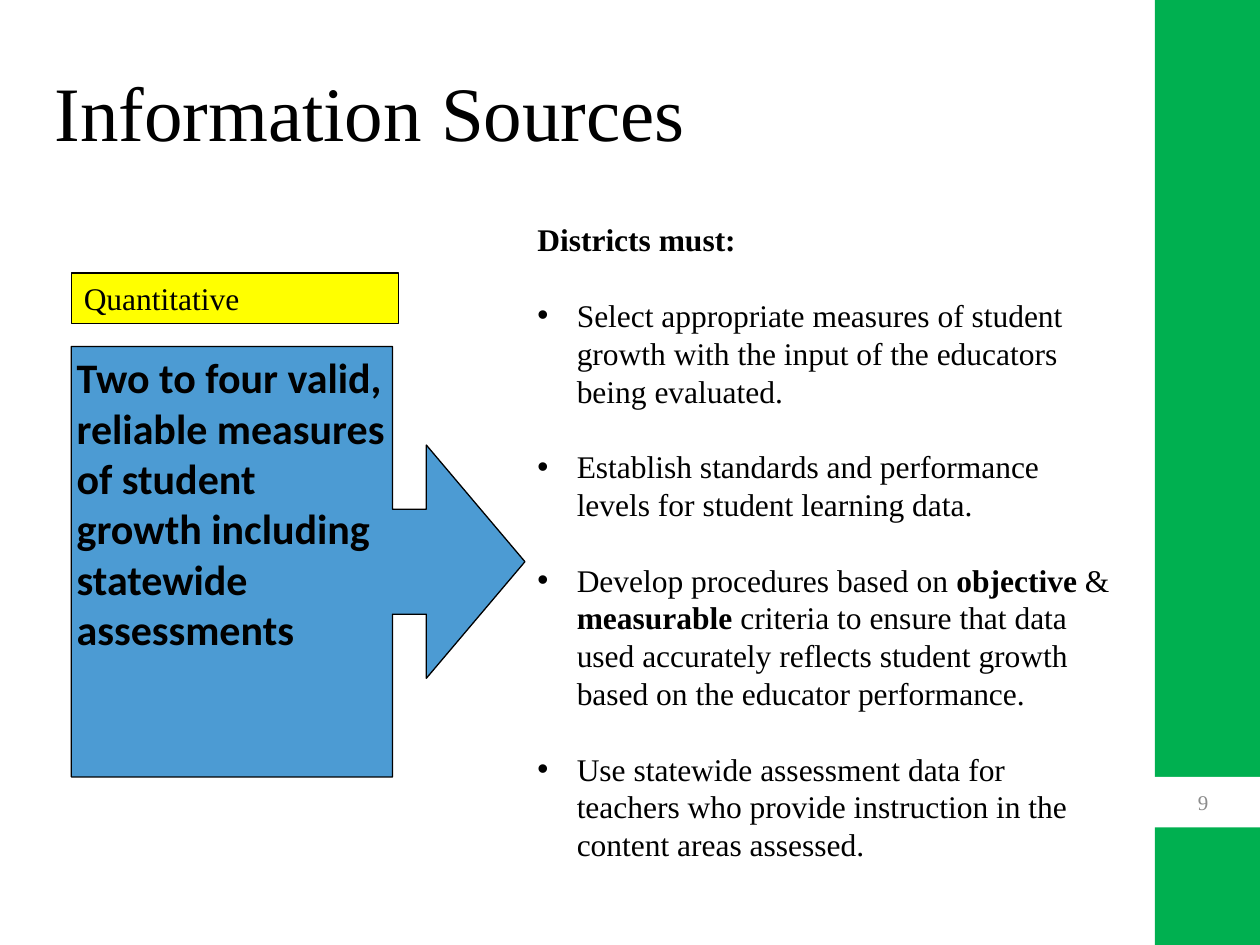
from lxml.etree import SubElement
from pptx import Presentation
from pptx.dml.color import RGBColor
from pptx.enum.shapes import MSO_SHAPE as Shape
from pptx.enum.text import MSO_ANCHOR as Anchor, PP_ALIGN as Align
from pptx.oxml.ns import qn
from pptx.util import Pt

SERIF = "Times New Roman"
LINE_FACTOR = 1.2
DUTY_SIZE = 18
INDENT = 22.5

# Every second piece of a duty is bold.
DUTIES = [
    ["Select appropriate measures of student growth with the input of the "
     "educators being evaluated."],
    ["Establish standards and performance levels for student learning data."],
    ["Develop procedures based on ", "objective", " & ", "measurable",
     " criteria to ensure that data used accurately reflects student growth "
     "based on the educator performance."],
    ["Use statewide assessment data for teachers who provide instruction in "
     "the content areas assessed."],
]


def rgb(color):
    return RGBColor.from_string(color)


def style_font(font, size, name=SERIF, color="000000", bold=False):
    font.size, font.name, font.bold = Pt(size), name, bold
    font.color.rgb = rgb(color)


def add_block(slide, kind, box, fill, line=None):
    block = slide.shapes.add_shape(kind, *map(Pt, box))
    block.shadow.inherit = False
    block.fill.solid()
    block.fill.fore_color.rgb = rgb(fill)
    if line:
        block.line.color.rgb = rgb(line)
        block.line.width = Pt(0.75)
    else:
        block.line.fill.background()
    return block


def write(block, text, size, anchor=Anchor.TOP, align=Align.LEFT, **font):
    frame = block.text_frame
    frame.word_wrap = True
    frame.vertical_anchor = anchor
    frame.text = text
    paragraph = frame.paragraphs[0]
    paragraph.alignment = align
    style_font(paragraph.runs[0].font, size, **font)
    return paragraph


def add_bullet(paragraph):
    """Give the paragraph a round bullet with a hanging indent."""
    props = paragraph._p.get_or_add_pPr()
    props.set("marL", str(Pt(INDENT)))
    props.set("indent", str(-Pt(INDENT)))
    SubElement(props, qn("a:buFont"), typeface="Arial")
    SubElement(props, qn("a:buChar"), char="•")


def add_duties(slide, box):
    duties = slide.shapes.add_textbox(*map(Pt, box))
    line_height = Pt(DUTY_SIZE * LINE_FACTOR)
    heading = write(duties, "Districts must:", DUTY_SIZE, bold=True)
    heading.line_spacing = line_height
    for pieces in DUTIES:
        paragraph = duties.text_frame.add_paragraph()
        add_bullet(paragraph)
        paragraph.line_spacing = paragraph.space_before = line_height
        for index, piece in enumerate(pieces):
            run = paragraph.add_run()
            run.text = piece
            style_font(run.font, DUTY_SIZE, bold=index % 2 == 1)


def add_measures(slide, box):
    callout = add_block(slide, Shape.RIGHT_ARROW_CALLOUT, box, "4C9BD3", "000000")
    for index, value in enumerate((0.244, 0.271, 0.229, 0.708)):
        callout.adjustments[index] = value
    frame = callout.text_frame
    frame.margin_left = frame.margin_right = Pt(3)
    frame.margin_top = frame.margin_bottom = Pt(3)
    measures = write(callout, "Two to four valid, reliable measures of student "
                     "growth including statewide assessments",
                     24, name="Calibri", bold=True)
    measures.line_spacing = Pt(24 * LINE_FACTOR)


def main():
    prs = Presentation()
    prs.slide_width, prs.slide_height = Pt(720), Pt(540)
    slide = prs.slides.add_slide(prs.slide_layouts[6])

    add_block(slide, Shape.RECTANGLE, (660, 0, 60, 540), "00B050")
    title = slide.shapes.add_textbox(Pt(24), Pt(18), Pt(628.5), Pt(90))
    write(title, "Information Sources", 44, Anchor.MIDDLE)
    add_measures(slide, (40.8, 198, 259.2, 246))
    add_duties(slide, (300, 122.4, 342, 378))
    category = add_block(slide, Shape.RECTANGLE, (40.8, 156, 187, 29),
                         "FFFF00", "000000")
    write(category, "Quantitative", 18).line_spacing = Pt(18 * LINE_FACTOR)
    page = add_block(slide, Shape.RECTANGLE, (654, 444, 67, 28.8), "FFFFFF")
    write(page, "9", 12, Anchor.MIDDLE, Align.CENTER, color="8C8C8C")

    prs.save("out.pptx")


if __name__ == "__main__":
    main()
